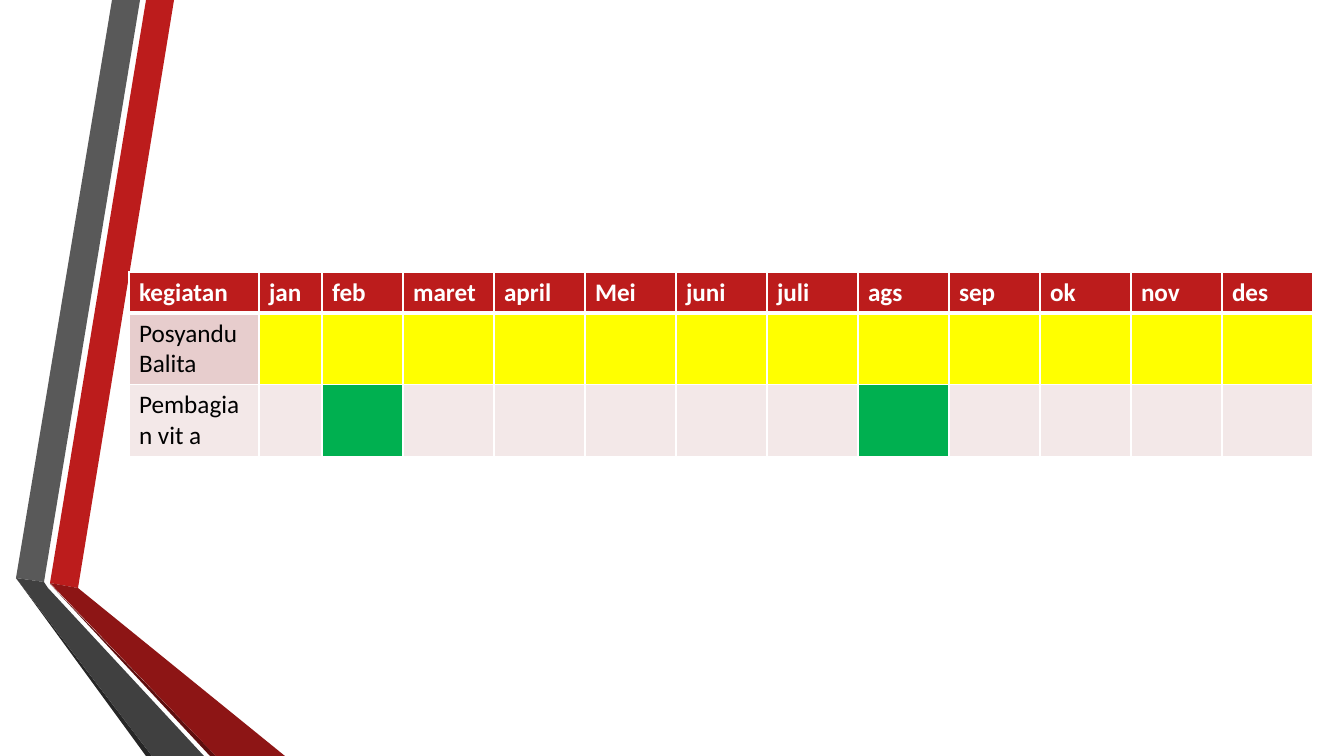
import dataclasses

import lxml.etree
import pptx
import pptx.dml.color
import pptx.oxml.ns
import pptx.util

EMU_PER_PX = 914400 / 100.8
BLANK_LAYOUT = 6


def px(n):
    return pptx.util.Emu(round(n * EMU_PER_PX))


def rgb(code):
    return pptx.dml.color.RGBColor.from_string(code)


@dataclasses.dataclass(frozen=True)
class Theme:
    font: str = "Calibri"
    body_size: int = 18
    white: str = "FFFFFF"
    black: str = "000000"
    red: str = "BC1C1C"
    red_dark: str = "8D1515"
    red_edge: str = "5E0E0E"
    grey: str = "595959"
    grey_dark: str = "404040"
    grey_edge: str = "262626"
    band_strong: str = "E7CDCD"
    band_light: str = "F3E8E8"
    yellow: str = "FFFF00"
    green: str = "00B050"


def write_text(tf, text, *, font, size, color, bold=False):
    r = tf.paragraphs[0].add_run()
    r.text = text
    r.font.name = font
    r.font.size = pptx.util.Pt(size)
    r.font.bold = bold
    r.font.color.rgb = rgb(color)


def set_border(cell, side, color, width):
    """Draw one cell edge; side is L, R, T or B. Call before filling the cell."""
    qn = pptx.oxml.ns.qn
    tc_pr = cell._tc.get_or_add_tcPr()
    ln = lxml.etree.SubElement(tc_pr, qn(f"a:ln{side}"), w=str(pptx.util.Pt(width)))
    fill = lxml.etree.SubElement(ln, qn("a:solidFill"))
    lxml.etree.SubElement(fill, qn("a:srgbClr"), val=color)


class SlideBuilder:
    def __init__(self, prs, theme):
        self.theme = theme
        self.slide = prs.slides.add_slide(prs.slide_layouts[BLANK_LAYOUT])

    def polygon(self, points, color):
        fb = self.slide.shapes.build_freeform(*points[0], scale=EMU_PER_PX)
        fb.add_line_segments(points[1:], close=True)
        sp = fb.convert_to_shape()
        sp.shadow.inherit = False
        sp.fill.solid()
        sp.fill.fore_color.rgb = rgb(color)
        sp.line.fill.background()

    def table(self, left, top, widths, heights):
        frame = self.slide.shapes.add_table(
            len(heights), len(widths), px(left), px(top), px(sum(widths)), px(sum(heights)))
        table = frame.table
        table.first_row = table.horz_banding = False
        for column, width in zip(table.columns, widths):
            column.width = px(width)
        for row, height in zip(table.rows, heights):
            row.height = px(height)
        return table

    def cell(self, cell, text, fill, *, header=False, below_header=False):
        t = self.theme
        heavy_side = "B" if header else "T" if below_header else None
        for side in "LRTB":
            set_border(cell, side, t.white, 3 if side == heavy_side else 1)
        cell.fill.solid()
        cell.fill.fore_color.rgb = rgb(fill)
        if text:
            write_text(cell.text_frame, text, font=t.font, size=t.body_size,
                       color=t.white if header else t.black, bold=header)


def draw_ribbons(builder):
    t = builder.theme
    ribbons = [
        (t.red, [(50, 583), (78, 588), (174, 0), (146, 0)]),
        (t.grey, [(140, 0), (112, 0), (16, 578), (44, 582)]),
        (t.grey_edge, [(16, 578), (146, 756), (152, 756)]),
        (t.red_edge, [(50, 584), (210, 756), (216, 756)]),
        (t.red_dark, [(50, 583), (216, 756), (285, 756), (78, 588)]),
        (t.grey_dark, [(204, 756), (48, 588), (44, 582), (16, 578), (152, 756)]),
    ]
    for color, points in ribbons:
        builder.polygon(points, color)


def draw_schedule(builder):
    t = builder.theme
    months = ["jan", "feb", "maret", "april", "Mei", "juni",
              "juli", "ags", "sep", "ok", "nov", "des"]
    activities = [  # name, row colour, mark colour, marked months
        ("Posyandu Balita", t.band_strong, t.yellow, months),
        ("Pembagian vit a", t.band_light, t.green, ["feb", "ags"]),
    ]
    table = builder.table(129, 272, [130, 63, 81] + [91] * 10, [41, 71, 71])
    for c, label in enumerate(["kegiatan"] + months):
        builder.cell(table.cell(0, c), label, t.red, header=True)
    for r, (name, band, mark, marked) in enumerate(activities, 1):
        builder.cell(table.cell(r, 0), name, band, below_header=r == 1)
        for c, month in enumerate(months, 1):
            builder.cell(table.cell(r, c), "", mark if month in marked else band,
                         below_header=r == 1)


def main():
    prs = pptx.Presentation()
    prs.slide_width, prs.slide_height = px(1344), px(756)
    builder = SlideBuilder(prs, Theme())
    draw_ribbons(builder)
    draw_schedule(builder)
    prs.save("out.pptx")


if __name__ == "__main__":
    main()
